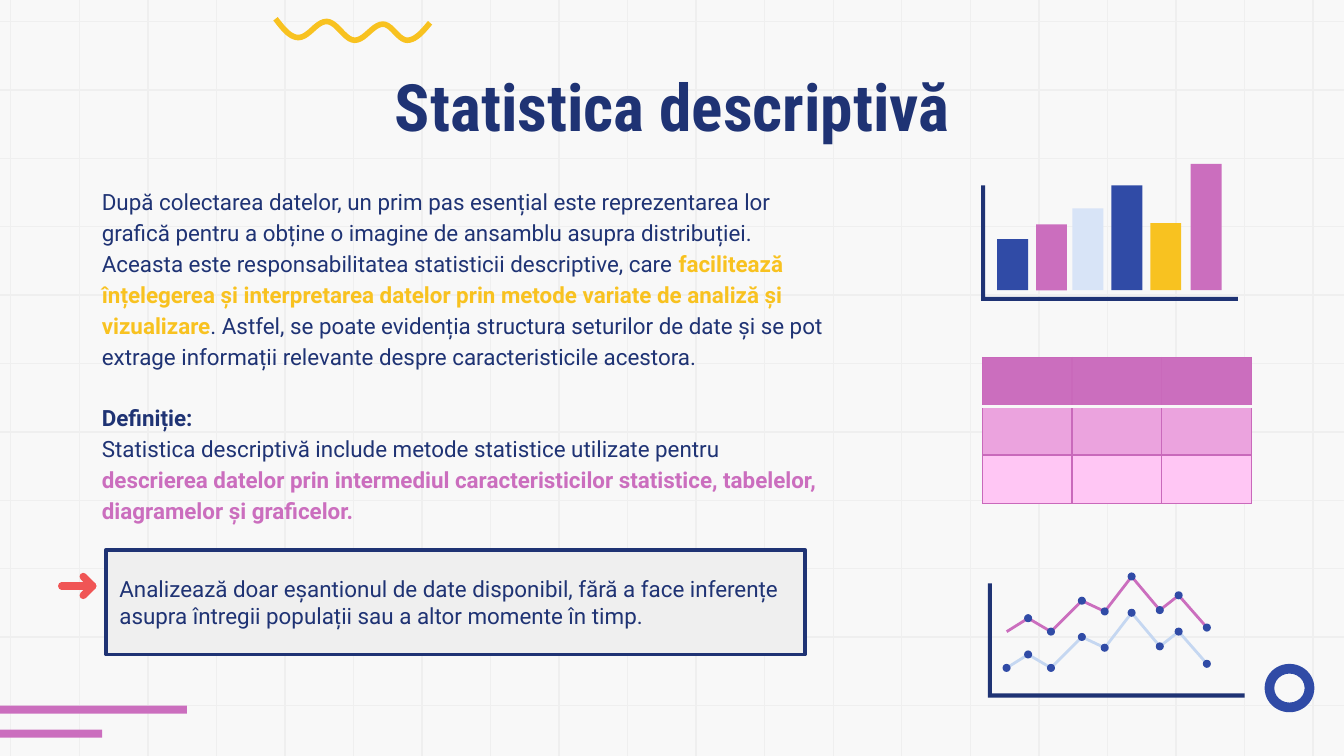
from collections import namedtuple
from math import cos, pi, sin

from lxml.etree import SubElement
from pptx import Presentation
from pptx.dml.color import RGBColor
from pptx.enum.shapes import MSO_CONNECTOR as Link, MSO_SHAPE as Preset
from pptx.enum.text import MSO_ANCHOR as Anchor, PP_ALIGN as Align
from pptx.oxml import parse_xml
from pptx.oxml.ns import nsdecls, qn
from pptx.util import Inches, Pt


class Theme:
    """Colours, fonts and type sizes of the slide."""
    paper, grid, panel = "F8F8F8", "EFEFEF", "EFEFEF"
    navy, blue, sky, pale = "1F3374", "304BA6", "C5D7F1", "D8E4F7"
    pink, rose, blush, border = "CB6EBE", "EBA3DE", "FFC6F4", "C969BB"
    yellow, red = "F8C220", "F05555"
    heading, body = "Roboto Condensed", "Roboto"
    heading_size, body_size = 35, 12


Box = namedtuple("Box", "left top width height")


def rgb(value):
    """Turn a hex string into a colour."""
    return RGBColor.from_string(value)


def add_preset(slide, preset, box, fill):
    """Add a flat preset shape without outline."""
    shape = slide.shapes.add_shape(preset, *map(Inches, box))
    shape.shadow.inherit = False
    shape.fill.solid()
    shape.fill.fore_color.rgb = rgb(fill)
    shape.line.fill.background()
    return shape


def add_path(slide, strokes, color, weight=None):
    """Add strokes of the given weight, or a filled outline without one."""
    strokes = [[(Inches(x), Inches(y)) for x, y in stroke] for stroke in strokes]
    builder = slide.shapes.build_freeform(*strokes[0][0])
    for number, (start, *rest) in enumerate(strokes):
        if number:
            builder.move_to(*start)
        builder.add_line_segments(rest, close=weight is None)
    shape = builder.convert_to_shape()
    shape.shadow.inherit = False
    if weight is None:
        shape.fill.solid()
        shape.fill.fore_color.rgb = rgb(color)
        shape.line.fill.background()
    else:
        shape.fill.background()
        shape.line.color.rgb = rgb(color)
        shape.line.width = Pt(weight)
    return shape


def add_run(paragraph, text, color=Theme.navy, bold=False, font=Theme.body, size=Theme.body_size):
    """Append one formatted run."""
    run = paragraph.add_run()
    run.text = text
    run.font.name, run.font.size, run.font.bold = font, Pt(size), bold
    run.font.color.rgb = rgb(color)


def add_text_frame(slide, box):
    """Add a wrapping text box and return its frame."""
    frame = slide.shapes.add_textbox(*map(Inches, box)).text_frame
    frame.word_wrap = True
    frame.margin_top = frame.margin_bottom = Inches(0.1)
    return frame


def add_grid(slide, box):
    """Draw the squared-paper background."""
    right, bottom = box.left + box.width, box.top + box.height
    rows = [box.top + 0.16 + 5.09 * i / 10 for i in range(11)]
    columns = [box.left + 0.08 + 0.51 * i for i in range(20)]
    ends = [(box.left, y, right, y) for y in rows] + [(x, box.top, x, bottom) for x in columns]
    for end in ends:
        rule = slide.shapes.add_connector(Link.STRAIGHT, *map(Inches, end))
        rule.line.color.rgb = rgb(Theme.grid)
        rule.line.width = Pt(0.75)
        SubElement(rule._element.spPr, qn("a:effectLst"))


def add_ornaments(slide, box):
    """Place the stripes, ring and squiggle around the page edge."""
    for top, width in ((5.25, 1.39), (5.43, 0.76)):
        add_preset(slide, Preset.RECTANGLE, Box(box.left, box.top + top, width, 0.06), Theme.pink)
    ring = add_preset(slide, Preset.DONUT, Box(box.left + 9.41, box.top + 4.94, 0.37, 0.36), Theme.blue)
    ring.adjustments[0] = 0.2
    add_squiggle(slide, Box(box.left + 2.05, box.top + 0.14, 1.15, 0.16))


def add_squiggle(slide, box):
    """Draw a wave that eases between its turning points."""
    turns = [(0, 0), (0.17, 0.14), (0.38, 0.02), (0.59, 0.16), (0.8, 0.04), (0.98, 0.16), (1.15, 0.03)]
    eases = ([lambda t: sin(pi * t / 2)] + [lambda t: (1 - cos(pi * t)) / 2] * 4
             + [lambda t: 1 - cos(pi * t / 2)])
    steps = 10
    wave = [(box.left, box.top)]
    for (x0, y0), (x1, y1), ease in zip(turns, turns[1:], eases):
        for step in range(1, steps + 1):
            t = step / steps
            wave.append((box.left + x0 + (x1 - x0) * t, box.top + y0 + (y1 - y0) * ease(t)))
    add_path(slide, [wave], Theme.yellow, 3)


def add_title(slide, box):
    """Place the slide title."""
    title = add_text_frame(slide, box).paragraphs[0]
    title.alignment = Align.CENTER
    add_run(title, "Statistica descriptivă", bold=True, font=Theme.heading, size=Theme.heading_size)


def add_explanation(slide, box):
    """Place the introduction and the definition."""
    paragraphs = [
        [("După colectarea datelor, un prim pas esențial este reprezentarea lor grafică pentru a obține "
          "o imagine de ansamblu asupra distribuției. Aceasta este responsabilitatea statisticii "
          "descriptive, care ",),
         ("facilitează înțelegerea și interpretarea datelor prin metode variate de analiză și "
          "vizualizare", Theme.yellow, True),
         (". Astfel, se poate evidenția structura seturilor de date și se pot extrage informații "
          "relevante despre caracteristicile acestora.",)],
        [("Definiție:", Theme.navy, True)],
        [("Statistica descriptivă include metode statistice utilizate pentru ",),
         ("descrierea datelor prin intermediul caracteristicilor statistice, tabelelor, diagramelor "
          "și graficelor.", Theme.pink, True)],
    ]
    frame = add_text_frame(slide, box)
    for number, runs in enumerate(paragraphs):
        paragraph = frame.add_paragraph() if number else frame.paragraphs[0]
        paragraph.line_spacing = 1.15
        if number == 1:
            paragraph.space_before = Pt(16.6)
        for run in runs:
            add_run(paragraph, *run)


def add_axes(slide, box, thickness=0.03):
    """Draw an L-shaped pair of axes along the left and bottom of the box."""
    left, top, right, bottom = box.left, box.top, box.left + box.width, box.top + box.height
    add_path(slide, [[(left, top), (left, bottom), (right, bottom), (right, bottom - thickness),
                      (left + thickness, bottom - thickness), (left + thickness, top)]], Theme.navy)


def add_bar_icon(slide, box):
    """Draw the decorative bars above their axes."""
    bars = [(0.12, 0.38, Theme.blue), (0.41, 0.49, Theme.pink), (0.68, 0.61, Theme.pale),
            (0.97, 0.78, Theme.blue), (1.26, 0.5, Theme.yellow), (1.56, 0.94, Theme.pink)]
    base = box.top + box.height - 0.08
    for offset, height, color in bars:
        add_preset(slide, Preset.RECTANGLE, Box(box.left + offset, base - height, 0.23, height), color)
    add_axes(slide, box)


def add_table_icon(slide, box):
    """Draw the empty table with its header and two body rows."""
    table_frame = slide.shapes.add_table(3, 3, *map(Inches, box))
    edges = {side: (Theme.border, 0.75) for side in "LRTB"}
    divider = (Theme.paper, 2)
    styles = [(Theme.pink, {**edges, "B": divider}), (Theme.rose, {**edges, "T": divider}),
              (Theme.blush, edges)]
    for row, (fill, borders) in zip(table_frame.table.rows, styles):
        for cell in row.cells:
            cell.margin_top = cell.margin_bottom = 0
            cell.fill.solid()
            cell.fill.fore_color.rgb = rgb(fill)
            for place, (side, (color, weight)) in enumerate(borders.items()):
                cell._tc.get_or_add_tcPr().insert(place, parse_xml(
                    f'<a:ln{side} {nsdecls("a")} w="{Pt(weight)}"><a:solidFill>'
                    f'<a:srgbClr val="{color}"/></a:solidFill></a:ln{side}>'))


def add_trend_icon(slide, box):
    """Draw two parallel decorative trend lines with dots and axes."""
    trend = [(0.14, 0.36), (0.3, 0.26), (0.47, 0.36), (0.7, 0.13), (0.87, 0.21),
             (1.07, -0.05), (1.28, 0.2), (1.42, 0.09), (1.63, 0.33)]
    dot = 0.06
    for shift, color, first_dot in ((0.27, Theme.sky, 0), (0, Theme.pink, 1)):
        points = [(box.left + x, box.top + y + shift) for x, y in trend]
        add_path(slide, [points], color, 1.5)
        for x, y in points[first_dot:]:
            add_preset(slide, Preset.OVAL, Box(x - dot / 2, y - dot / 2, dot, dot), Theme.blue)
    add_axes(slide, box)


def add_callout(slide, box):
    """Place the framed remark and the arrow pointing at it."""
    remark = add_preset(slide, Preset.RECTANGLE, box, Theme.panel)
    remark.line.color.rgb = rgb(Theme.navy)
    remark.line.width = Pt(2)
    frame = remark.text_frame
    frame.word_wrap = True
    frame.vertical_anchor = Anchor.MIDDLE
    frame.paragraphs[0].alignment = Align.LEFT
    add_run(frame.paragraphs[0], "Analizează doar eșantionul de date disponibil, fără a face inferențe "
                                 "asupra întregii populații sau a altor momente în timp.")
    tip, middle, wing = box.left - 0.1, box.top + 0.27, 0.07
    arrow = add_path(slide, [[(tip - 0.23, middle), (tip, middle)],
                             [(tip - wing, middle - wing), (tip, middle), (tip - wing, middle + wing)]],
                     Theme.red, 4)
    arrow._element.spPr.find(qn("a:ln")).set("cap", "rnd")


def main():
    """Build and save the slide."""
    page = Box(0, 0, 10, 10 * 9 / 16)
    deck = Presentation()
    deck.slide_width, deck.slide_height = Inches(page.width), Inches(page.height)
    slide = deck.slides.add_slide(deck.slide_layouts[6])
    slide.background.fill.solid()
    slide.background.fill.fore_color.rgb = rgb(Theme.paper)
    add_grid(slide, page)
    add_ornaments(slide, page)
    add_title(slide, Box(0.79, 0.39, 8.43, 0.63))
    add_explanation(slide, Box(0.66, 1.27, 5.6, 3.58))
    add_bar_icon(slide, Box(7.3, 1.38, 1.91, 0.86))
    add_table_icon(slide, Box(7.31, 2.66, 2, 1.09))
    add_trend_icon(slide, Box(7.35, 4.34, 1.91, 0.85))
    add_callout(slide, Box(0.79, 4.09, 5.2, 0.78))
    deck.save("out.pptx")


if __name__ == "__main__":
    main()
